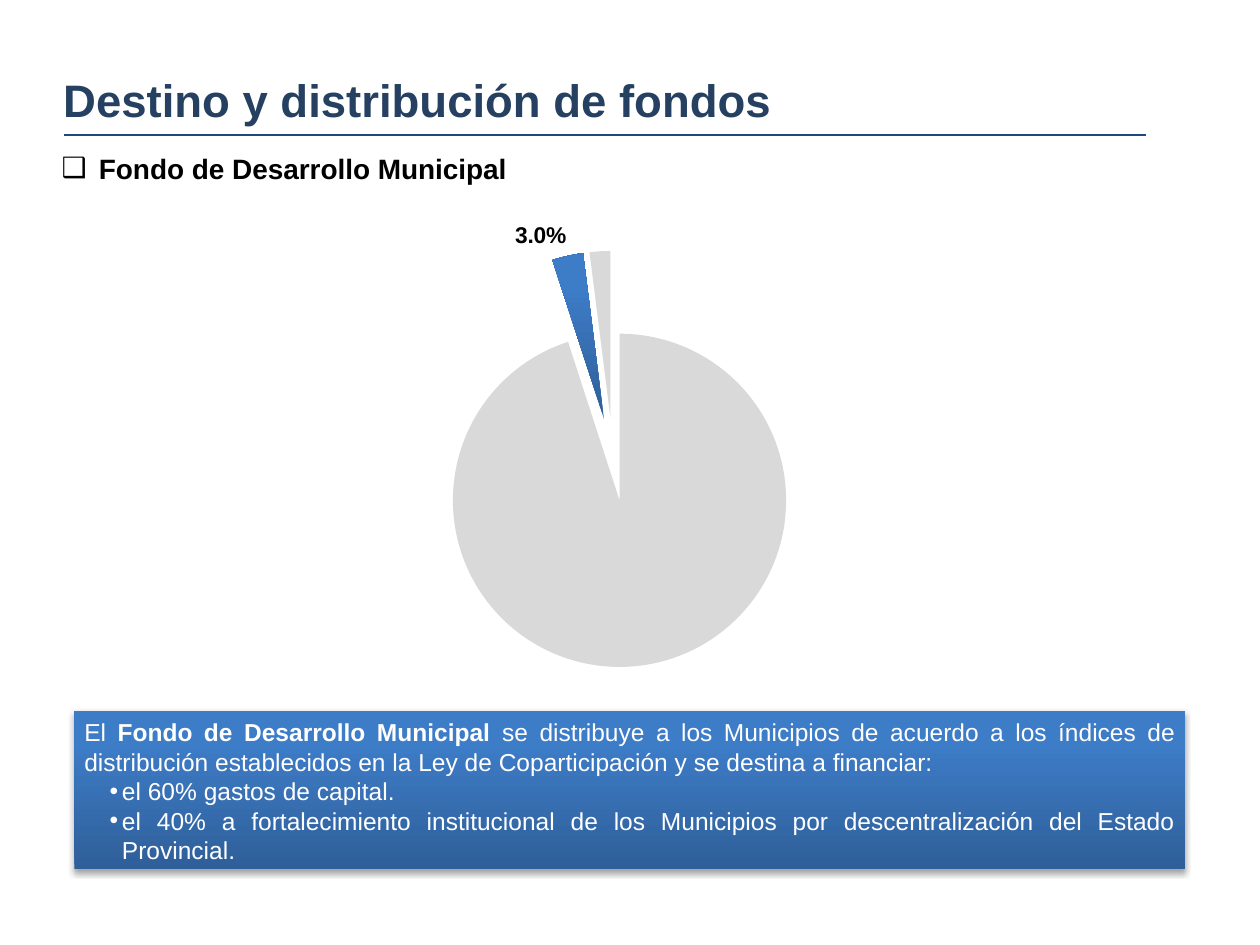
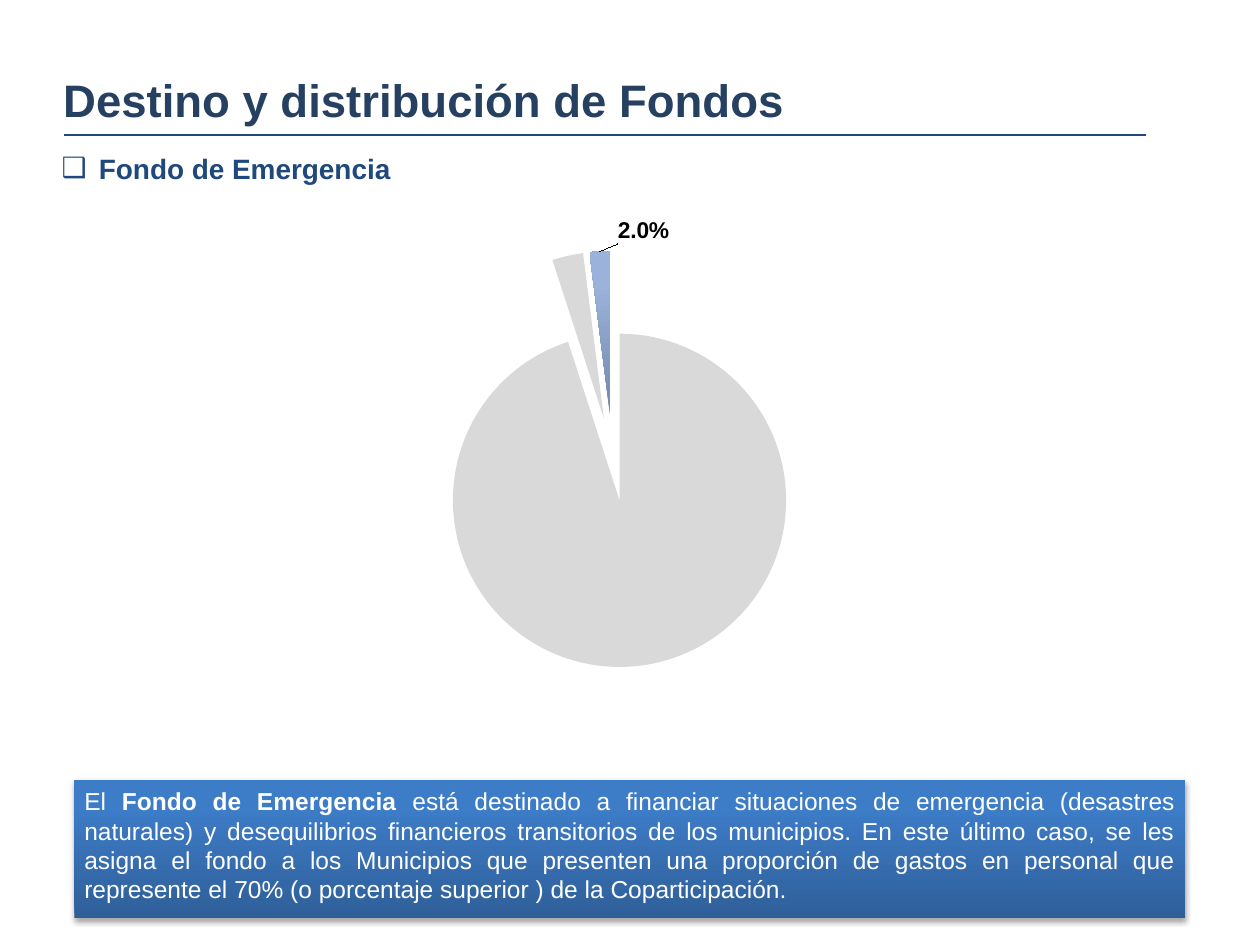
import copy

import lxml.etree
import pptx
import pptx.chart.data
import pptx.dml.color
import pptx.enum.chart
import pptx.enum.shapes
import pptx.enum.text
import pptx.oxml.ns
import pptx.util

Cm = pptx.util.Cm
Pt = pptx.util.Pt
RGBColor = pptx.dml.color.RGBColor
qn = pptx.oxml.ns.qn
Align = pptx.enum.text.PP_ALIGN

NAVY = RGBColor(0x25, 0x40, 0x61)
BLUE = RGBColor(0x1F, 0x49, 0x7D)
BLACK = RGBColor(0, 0, 0)
WHITE = RGBColor(0xFF, 0xFF, 0xFF)
GREY = RGBColor(0xD9, 0xD9, 0xD9)
BAND_DARK = RGBColor(0x2F, 0x5F, 0x99)
BAND_LIGHT = RGBColor(0x3D, 0x7C, 0xC7)
PALE_DARK = RGBColor(0x72, 0x86, 0xA8)
PALE_LIGHT = RGBColor(0x9B, 0xB2, 0xDB)
FONT = "Arial"

TITLE_BOX = (Cm(1.02), Cm(1.32), Cm(22.4), Cm(1.42))
RULE_BOX = (Cm(1.3), Cm(2.72), Cm(21.81), Cm(0))
FUND_BOX = (Cm(0.99), Cm(2.92), Cm(10.6), Cm(0.94))
PIE_BOX = (Cm(1.52), Cm(4.19), Cm(22.12), Cm(14.48))
SHARES = (95, 3, 2)


def add_node(parent, tag, **attributes):
    return lxml.etree.SubElement(parent, qn(tag), attributes)


def write_paragraph(paragraph, runs, size=14, color=WHITE, align=Align.LEFT,
                    bullet=None, left=Cm(0), hanging=Cm(0)):
    paragraph.alignment = align
    paragraph.space_before = Pt(0)
    if bullet:
        properties = paragraph._p.get_or_add_pPr()
        properties.set("marL", str(left))
        properties.set("indent", str(-hanging))
        add_node(properties, "a:buFont", typeface=FONT)
        add_node(properties, "a:buChar", char=bullet)
    for words, bold in runs:
        run = paragraph.add_run()
        run.text = words
        run.font.name = FONT
        run.font.size = Pt(size)
        run.font.bold = bold
        run.font.color.rgb = color


def fill_gradient(fill, dark, light):
    fill.gradient()
    fill.gradient_angle = 90
    for stop, color, position in zip(fill.gradient_stops, (dark, light), (0, 0.8)):
        stop.color.rgb = color
        stop.position = position


def fill_placeholder(placeholder, box, words, **text_format):
    placeholder.left, placeholder.top, placeholder.width, placeholder.height = box
    frame = placeholder.text_frame
    frame.auto_size = pptx.enum.text.MSO_AUTO_SIZE.NONE
    frame.vertical_anchor = pptx.enum.text.MSO_ANCHOR.TOP
    write_paragraph(frame.paragraphs[0], [(words, True)], **text_format)


def add_heading(slide, title, fund, fund_color):
    fill_placeholder(slide.shapes.title, TITLE_BOX, title, size=26, color=NAVY)
    fill_placeholder(slide.placeholders[1], FUND_BOX, fund, size=16, color=fund_color,
                     bullet="❑", left=Cm(0.75), hanging=Cm(0.75))
    left, top, width, height = RULE_BOX
    rule = slide.shapes.add_connector(pptx.enum.shapes.MSO_CONNECTOR.STRAIGHT,
                                      left, top, left + width, top + height)
    rule.line.color.rgb = BLUE
    rule.line.width = Pt(1.5)
    add_node(rule._element.spPr, "a:effectLst")


def set_plot_layout(chart):
    plot_area = chart._chartSpace.chart.plotArea
    for old in plot_area.findall(qn("c:layout")):
        plot_area.remove(old)
    layout = add_node(plot_area, "c:layout")
    plot_area.insert(0, layout)
    manual = add_node(layout, "c:manualLayout")
    for tag, value in (("layoutTarget", "inner"), ("xMode", "edge"), ("yMode", "edge"),
                       ("x", "0.01"), ("y", "0.06"), ("w", "0.96"), ("h", "0.58")):
        add_node(manual, f"c:{tag}", val=value)


def label_slice(series, highlighted, shift):
    labels = series.data_labels
    labels.show_value = False
    labels.show_percentage = True
    labels.number_format = "0.0%"
    labels.number_format_is_linked = False
    labels.position = pptx.enum.chart.XL_LABEL_POSITION.OUTSIDE_END
    labels.font.name = FONT
    labels.font.size = Pt(13)
    labels.font.bold = True
    labels.font.color.rgb = BLACK
    node = labels._element
    shared = [child for child in node if child.tag != qn("c:showLeaderLines")]
    for index in range(len(SHARES)):
        label = add_node(node, "c:dLbl")
        node.insert(index, label)
        add_node(label, "c:idx", val=str(index))
        if index != highlighted:
            add_node(label, "c:delete", val="1")
            continue
        if shift:
            manual = add_node(add_node(label, "c:layout"), "c:manualLayout")
            add_node(manual, "c:x", val=str(shift))
            add_node(manual, "c:y", val="0")
        label.extend(copy.deepcopy(child) for child in shared)


def add_fund_pie(slide, box, highlighted, dark, light, label_shift=0):
    data = pptx.chart.data.CategoryChartData()
    data.categories = [str(number + 1) for number in range(len(SHARES))]
    data.add_series("Series 1", SHARES)
    chart = slide.shapes.add_chart(pptx.enum.chart.XL_CHART_TYPE.PIE, *box, data).chart
    chart.has_title = False
    chart.has_legend = False
    chart.font.name = "Calibri"
    chart.font.size = Pt(18)
    chart.font.color.rgb = BLACK
    set_plot_layout(chart)
    chart.plots[0].vary_by_categories = False
    series = chart.plots[0].series[0]
    explosion = add_node(series._element, "c:explosion", val="25")
    series._element.find(qn("c:tx")).addnext(explosion)
    for index in range(len(SHARES)):
        wedge = series.points[index].format
        wedge.line.fill.background()
        if index == highlighted:
            fill_gradient(wedge.fill, dark, light)
        else:
            wedge.fill.solid()
            wedge.fill.fore_color.rgb = GREY
    label_slice(series, highlighted, label_shift)


def add_explanation(slide, box, runs, items=()):
    band = slide.shapes.add_shape(pptx.enum.shapes.MSO_SHAPE.RECTANGLE, *box)
    fill_gradient(band.fill, BAND_DARK, BAND_LIGHT)
    band.line.fill.background()
    band.shadow.inherit = False
    effects = band._element.spPr.find(qn("a:effectLst"))
    shadow = add_node(effects, "a:outerShdw", blurRad=str(Pt(3.1)), dist=str(Pt(1.8)),
                      dir="5400000", rotWithShape="0")
    add_node(add_node(shadow, "a:srgbClr", val=str(BLACK)), "a:alpha", val="35000")
    frame = band.text_frame
    frame.word_wrap = True
    frame.vertical_anchor = pptx.enum.text.MSO_ANCHOR.TOP
    frame.margin_left = frame.margin_right = Cm(0.2)
    frame.margin_top = frame.margin_bottom = Cm(0.13)
    write_paragraph(frame.paragraphs[0], runs, align=Align.JUSTIFY)
    for item in items:
        write_paragraph(frame.add_paragraph(), [(item, False)], align=Align.JUSTIFY,
                        bullet="•", left=Cm(0.76), hanging=Cm(0.25))


def build_development_slide(slide):
    add_heading(slide, "Destino y distribución de fondos",
                "Fondo de Desarrollo Municipal", BLACK)
    add_fund_pie(slide, PIE_BOX, 1, BAND_DARK, BAND_LIGHT)
    add_explanation(
        slide, (Cm(1.5), Cm(14.33), Cm(22.4), Cm(3.2)),
        [("El ", False), ("Fondo de Desarrollo Municipal ", True),
         ("se distribuye a los Municipios de acuerdo a los índices de distribución "
          "establecidos en la Ley de Coparticipación y se destina a financiar:", False)],
        ["el 60% gastos de capital.",
         "el 40% a fortalecimiento institucional de los Municipios por "
         "descentralización del Estado Provincial."])


def build_emergency_slide(slide):
    add_heading(slide, "Destino y distribución de Fondos", "Fondo de Emergencia", BLUE)
    add_fund_pie(slide, PIE_BOX, 2, PALE_DARK, PALE_LIGHT, label_shift=0.04)
    add_explanation(
        slide, (Cm(1.5), Cm(15.72), Cm(22.4), Cm(2.79)),
        [("El ", False), ("Fondo de Emergencia ", True),
         ("está destinado a financiar situaciones de emergencia (desastres naturales) y "
          "desequilibrios financieros transitorios de los municipios. En este último "
          "caso, se les asigna el fondo a los Municipios que presenten una proporción de "
          "gastos en personal que represente el 70% (o porcentaje superior ) de la "
          "Coparticipación.", False)])


def main():
    deck = pptx.Presentation()
    deck.slide_width = Cm(25.4)
    deck.slide_height = Cm(19.05)
    for build in (build_development_slide, build_emergency_slide):
        build(deck.slides.add_slide(deck.slide_layouts[1]))
    deck.save("out.pptx")


if __name__ == "__main__":
    main()
